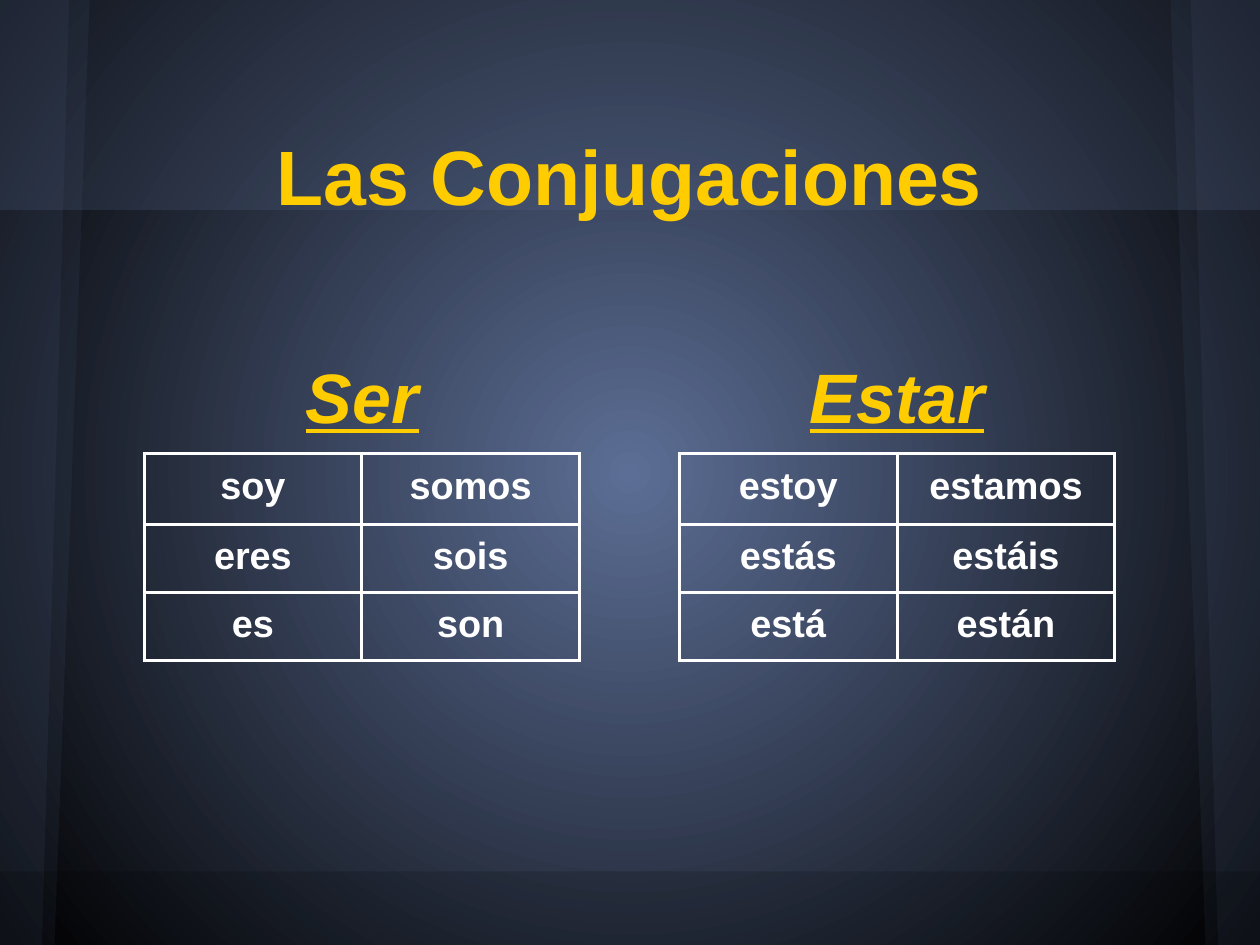
from pptx import Presentation
from pptx.dml.color import RGBColor
from pptx.enum.shapes import MSO_SHAPE
from pptx.enum.text import MSO_ANCHOR, PP_ALIGN
from pptx.oxml import parse_xml
from pptx.oxml.ns import nsdecls, qn
from pptx.util import Inches, Pt

RECT = MSO_SHAPE.RECTANGLE
CENTER = PP_ALIGN.CENTER
TOP, MIDDLE = MSO_ANCHOR.TOP, MSO_ANCHOR.MIDDLE

WIDTH, HEIGHT = 11.11, 8.33
BLUE, BLACK, GOLD, WHITE = "5C6E95", "000000", "FFCC00", "FFFFFF"
COLS = [1.92, 1.92]
ROWS = [0.62, 0.59, 0.59]

# Verb, heading left and width, table left, forms
VERBS = [
    ("Ser", 2.62, 1.15, 1.27,
     [("soy", "somos"), ("eres", "sois"), ("es", "son")]),
    ("Estar", 7.06, 1.7, 5.99,
     [("estoy", "estamos"), ("estás", "estáis"), ("está", "están")]),
]


def color(code):
    return RGBColor.from_string(code)


def paint(shape, code, alpha):
    """Give a shape a see-through fill with no line or shadow."""
    shape.shadow.inherit = False
    shape.line.fill.background()
    shape.fill.solid()
    shape.fill.fore_color.rgb = color(code)
    tint = shape._element.spPr.find(qn("a:solidFill"))[0]
    tint.append(parse_xml(f'<a:alpha {nsdecls("a")} val="{alpha * 1000}"/>'))


def add_glow(slide):
    fill = slide.background.fill
    fill.gradient()
    for stop, code in zip(fill.gradient_stops, (BLUE, BLACK)):
        stop.color.rgb = color(code)
    lin = slide.element.find(".//" + qn("a:lin"))
    lin.getparent().replace(lin, parse_xml(
        f'<a:path {nsdecls("a")} path="circle">'
        '<a:fillToRect l="50000" t="50000" r="50000" b="50000"/></a:path>'))


def add_band(slide, top, height, code, alpha):
    band = slide.shapes.add_shape(
        RECT, Inches(0), Inches(top), Inches(WIDTH), Inches(height))
    paint(band, code, alpha)


def add_beam(slide, edge, upper, lower):
    """Draw a slanted strip between a slide edge and two x positions."""
    points = [(upper, 0), (lower, HEIGHT), (edge, HEIGHT)]
    pen = slide.shapes.build_freeform(Inches(edge), Inches(0))
    pen.add_line_segments([(Inches(x), Inches(y)) for x, y in points])
    paint(pen.convert_to_shape(), BLUE, 10)


def add_run(para, text, size, code, fancy=False):
    para.alignment = CENTER
    run = para.add_run()
    run.text = text
    font = run.font
    font.name, font.size, font.bold = "Arial", Pt(size), True
    font.italic = font.underline = fancy
    font.color.rgb = color(code)


def add_label(slide, text, box, size, anchor=TOP, fancy=False):
    frame = slide.shapes.add_textbox(*map(Inches, box)).text_frame
    frame.word_wrap = True
    frame.vertical_anchor = anchor
    frame.margin_left = frame.margin_right = Inches(0.04)
    frame.margin_top = frame.margin_bottom = Inches(0.04)
    para = frame.paragraphs[0]
    para.line_spacing = 1.2
    add_run(para, text, size, GOLD, fancy)


def add_border(cell):
    props = cell._tc.get_or_add_tcPr()
    for spot, side in enumerate(("lnL", "lnR", "lnT", "lnB")):
        props.insert(spot, parse_xml(
            f'<a:{side} {nsdecls("a")} w="{Pt(2.25)}"><a:solidFill>'
            f'<a:srgbClr val="{WHITE}"/></a:solidFill></a:{side}>'))


def add_forms(slide, left, forms):
    table = slide.shapes.add_table(
        len(ROWS), len(COLS), Inches(left), Inches(4),
        Inches(sum(COLS)), Inches(sum(ROWS))).table
    table.first_row = table.horz_banding = False
    for col, width in zip(table.columns, COLS):
        col.width = Inches(width)
    for row, height, words in zip(table.rows, ROWS, forms):
        row.height = Inches(height)
        for cell, word in zip(row.cells, words):
            cell.fill.background()
            cell.margin_left = cell.margin_right = Inches(0.1)
            cell.margin_top = cell.margin_bottom = Inches(0.1)
            add_run(cell.text_frame.paragraphs[0], word, 24, WHITE)
            add_border(cell)


def main():
    deck = Presentation()
    deck.slide_width, deck.slide_height = Inches(WIDTH), Inches(HEIGHT)
    slide = deck.slides.add_slide(deck.slide_layouts[6])

    # Backdrop
    add_glow(slide)
    add_band(slide, 0, 1.85, BLUE, 20)
    for upper, lower in ((0.79, 0.48), (0.61, 0.37)):
        add_beam(slide, 0, upper, lower)
        add_beam(slide, WIDTH, WIDTH - upper, WIDTH - lower)
    add_band(slide, 7.68, 0.65, BLACK, 15)

    # Title
    add_label(slide, "Las Conjugaciones", (0.9, 0.78, 9.3, 1.36), 48.9, MIDDLE)

    # Verbs with their forms
    for verb, left, width, start, forms in VERBS:
        add_label(slide, verb, (left, 2.93, width, 0.82), 44.4, fancy=True)
        add_forms(slide, start, forms)

    deck.save("out.pptx")


if __name__ == "__main__":
    main()
